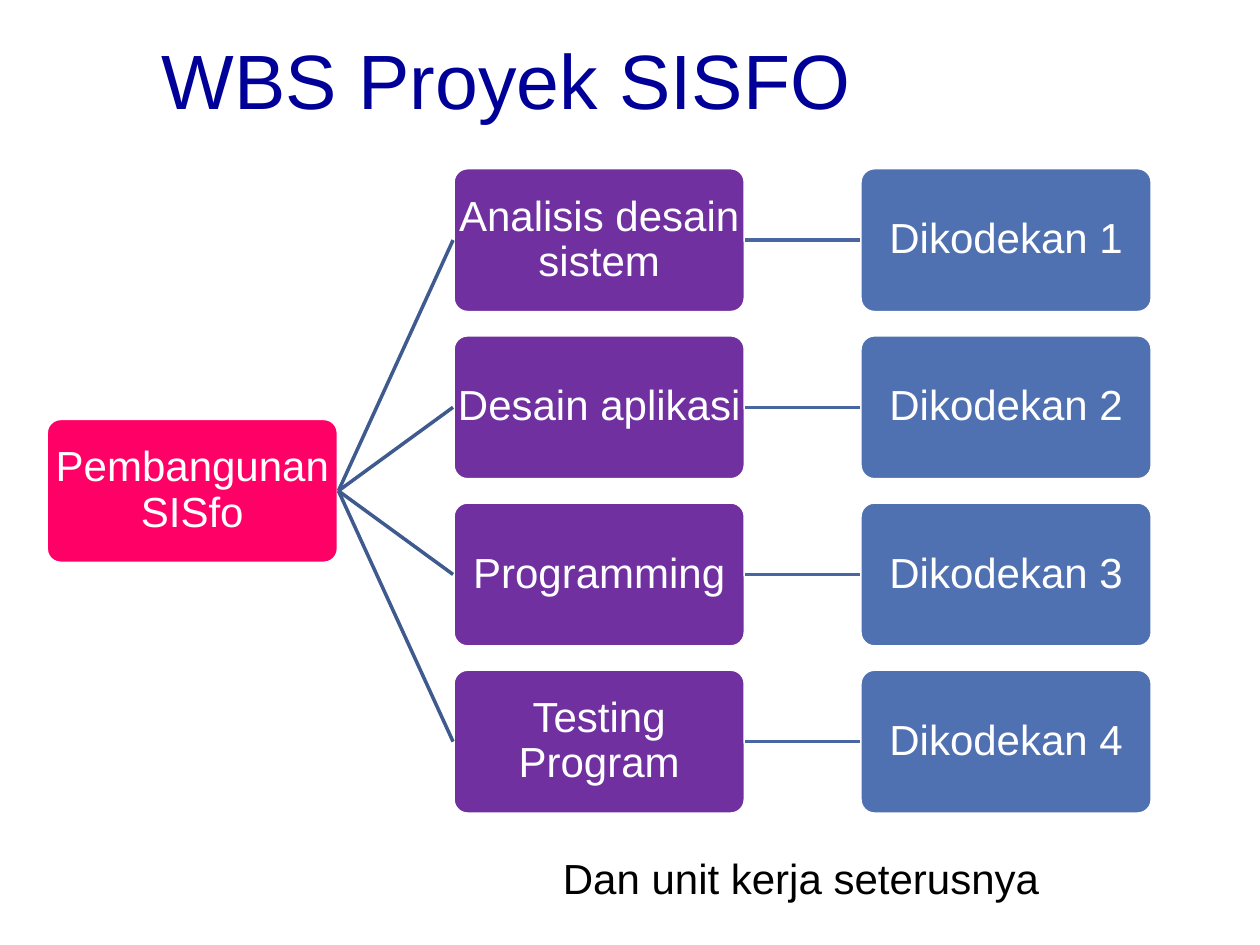
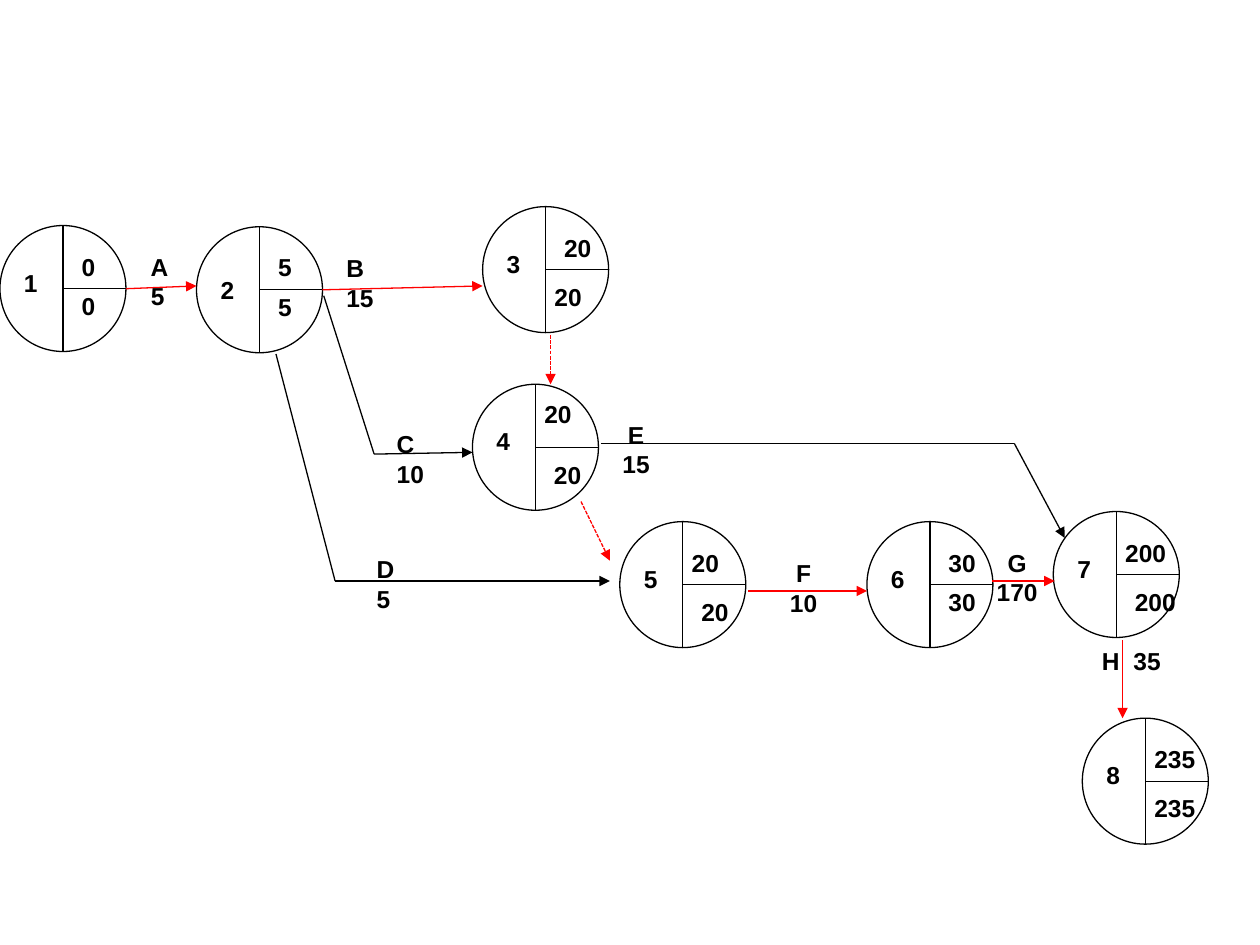
from itertools import pairwise

from lxml.etree import SubElement
from pptx import Presentation
from pptx.dml.color import RGBColor
from pptx.enum.dml import MSO_LINE
from pptx.enum.shapes import MSO_CONNECTOR, MSO_SHAPE
from pptx.enum.text import MSO_ANCHOR, PP_ALIGN
from pptx.oxml.ns import qn
from pptx.util import Pt

FONT = "Arial"
NAVY = RGBColor(0x00, 0x00, 0x99)
PINK = RGBColor(0xFF, 0x00, 0x66)
PURPLE = RGBColor(0x70, 0x30, 0xA0)
BLUE = RGBColor(0x4F, 0x70, 0xB1)
BRANCH_BLUE = RGBColor(0x3F, 0x5A, 0x8E)
LINK_BLUE = RGBColor(0x48, 0x66, 0xA1)
RED = RGBColor(0xFF, 0x00, 0x00)
BLACK = RGBColor(0x00, 0x00, 0x00)
WHITE = RGBColor(0xFF, 0xFF, 0xFF)

UNITS = ["Analisis desain sistem", "Desain aplikasi", "Programming", "Testing Program"]

NEAR, FAR = 34, 39.5
EVENTS = [
    ("1", (0, 128.9), 20.5, ("0", FAR, 11.5), ("0", FAR, NEAR)),
    ("2", (112.3, 129.6), 24, ("5", FAR, 11), ("5", FAR, NEAR)),
    ("3", (275.8, 118.1), 20.5, ("20", FAR, 11.5), ("20", NEAR, FAR)),
    ("4", (270, 219.6), 20.5, ("20", NEAR, 5), ("20", FAR, FAR)),
    ("5", (354.2, 298.1), 20.5, ("20", NEAR, 11.5), ("20", FAR, FAR)),
    ("6", (495.4, 298.1), 20.5, ("30", FAR, 11.5), ("30", FAR, NEAR)),
    ("7", (601.9, 292.3), 20.5, ("200", NEAR, 11.5), ("200", FAR, FAR)),
    ("8", (618.5, 410.4), 20.5, ("235", NEAR, 11.5), ("235", NEAR, FAR)),
]
ROUTES = [
    ([(72, 165), (112.3, 163.4)], RED, False),
    ([(184.3, 165.6), (275.8, 163.4)], RED, False),
    ([(185, 169), (213.8, 259.5), (270, 258.5)], BLACK, False),
    ([(157.7, 202.3), (191.5, 332), (348.5, 332)], BLACK, False),
    ([(343.4, 253.4), (579.6, 253.4), (608.4, 307.4)], BLACK, False),
    ([(314.6, 191.5), (314.6, 219.6)], RED, True),
    ([(332, 286.6), (348.5, 320.4)], RED, True),
    ([(427.7, 337.7), (495.4, 337.7)], RED, False),
    ([(566.6, 332), (602.6, 332)], RED, False),
    ([(641.5, 365.8), (641.5, 410.4)], RED, False),
]
ACTIVITIES = [
    ("A\n5", 79, 140.4, PP_ALIGN.CENTER),
    ("B\n15", 190.8, 141.1, PP_ALIGN.LEFT),
    ("C\n10", 219.6, 241.9, PP_ALIGN.LEFT),
    ("D\n5", 208.1, 313.2, PP_ALIGN.LEFT),
    ("E\n15", 348.5, 236.2, PP_ALIGN.CENTER),
    ("F\n10", 444.2, 315.4, PP_ALIGN.CENTER),
    ("G\n170", 562.3, 309.6, PP_ALIGN.CENTER),
]


def write(sp, text, size=14, color=BLACK, bold=False, align=PP_ALIGN.LEFT,
          anchor=MSO_ANCHOR.TOP, wrap=True, inset=None, spacing=None, tab=None):
    """Fill a shape with text, one paragraph per line."""
    tf = sp.text_frame
    tf.word_wrap = wrap
    tf.vertical_anchor = anchor
    if inset is not None:
        tf.margin_left = tf.margin_right = tf.margin_top = tf.margin_bottom = Pt(inset)
    tf.text = text
    for p in tf.paragraphs:
        p.alignment = align
        if spacing:
            p.line_spacing = spacing
        if tab:
            tabs = SubElement(p._p.get_or_add_pPr(), qn("a:tabLst"))
            SubElement(tabs, qn("a:tab"), pos=str(Pt(tab)), algn="l")
        for r in p.runs:
            r.font.name, r.font.size = FONT, Pt(size)
            r.font.bold, r.font.color.rgb = bold, color


def add_box(s, kind, left, top, width, height, fill, line, weight):
    """Add a filled and outlined preset shape."""
    sp = s.shapes.add_shape(kind, Pt(left), Pt(top), Pt(width), Pt(height))
    sp.shadow.inherit = False
    sp.fill.solid()
    sp.fill.fore_color.rgb = fill
    sp.line.color.rgb = line
    sp.line.width = Pt(weight)
    return sp


def add_line(s, start, end, color=BLACK, weight=0.75, dashed=False, arrow=False):
    """Add a straight connector between two points."""
    c = s.shapes.add_connector(MSO_CONNECTOR.STRAIGHT, *(Pt(v) for v in (*start, *end)))
    c.line.color.rgb = color
    c.line.width = Pt(weight)
    if dashed:
        c.line.dash_style = MSO_LINE.SQUARE_DOT
    if arrow:
        SubElement(c.line._get_or_add_ln(), qn("a:tailEnd"), type="triangle")
    SubElement(c._element.spPr, qn("a:effectLst"))
    return c


def add_label(s, text, left, top, align=PP_ALIGN.LEFT):
    """Add a bold label whose box is fitted to its text."""
    lines = text.split("\n")
    width = 14.4 + 7.8 * max(map(len, lines))
    sp = s.shapes.add_textbox(Pt(left), Pt(top), Pt(width), Pt(7.4 + 16.8 * len(lines)))
    write(sp, text, bold=True, align=align, wrap=False)
    return sp


def add_unit(s, text, left, top, width, height, fill):
    """Add one rounded box of the breakdown tree."""
    sp = add_box(s, MSO_SHAPE.ROUNDED_RECTANGLE, left, top, width, height, fill, WHITE, 2)
    sp.adjustments[0] = 0.1
    write(sp, text, size=24, color=WHITE, align=PP_ALIGN.CENTER,
          anchor=MSO_ANCHOR.MIDDLE, inset=0, spacing=0.9)
    return sp


def join(s, left_box, right_box, color):
    """Connect the right side of one box to the left side of another."""
    c = add_line(s, (0, 0), (0, 0), color, 2)
    c.begin_connect(left_box, 3)
    c.end_connect(right_box, 1)


def add_tree(s, left, top, width, height):
    """Lay out the root, its work units and their codes in three columns."""
    box_w, box_h = 167, 82.8
    col_step = (width - box_w) / 2
    row_step = (height - box_h) / (len(UNITS) - 1)
    root = add_unit(s, "Pembangunan SISfo", left, top + (height - box_h) / 2,
                    box_w, box_h, PINK)
    for i, name in enumerate(UNITS):
        y = top + i * row_step
        unit = add_unit(s, name, left + col_step, y, box_w, box_h, PURPLE)
        code = add_unit(s, f"Dikodekan {i + 1}", left + 2 * col_step, y, box_w, box_h, BLUE)
        join(s, root, unit, BRANCH_BLUE)
        join(s, unit, code, LINK_BLUE)


def add_event(s, left, top, number, number_top, early, late, size=72):
    """Add an event circle split into its number and two times."""
    mid_x, mid_y = left + size / 2, top + size / 2
    add_box(s, MSO_SHAPE.OVAL, left, top, size, size, WHITE, BLACK, 0.75)
    add_line(s, (mid_x, top), (mid_x, top + size))
    add_line(s, (mid_x, mid_y), (left + size, mid_y))
    add_label(s, number, left + 6.5, top + number_top, PP_ALIGN.CENTER)
    for time, dx, dy in (early, late):
        add_label(s, time, left + dx, top + dy)


def build_breakdown(prs):
    """Build the work breakdown slide."""
    s = prs.slides.add_slide(prs.slide_layouts[5])
    title = s.shapes.title
    title.left, title.top, title.width, title.height = Pt(0), Pt(0), Pt(579), Pt(90)
    write(title, "WBS Proyek SISFO", size=44, color=NAVY, align=PP_ALIGN.CENTER,
          anchor=MSO_ANCHOR.MIDDLE)
    add_tree(s, 26.4, 95.8, 632, 369.4)
    caption = s.shapes.add_textbox(Pt(314.6), Pt(483.8), Pt(376.6), Pt(36))
    write(caption, "Dan unit kerja seterusnya", size=24)


def build_network(prs):
    """Build the activity network slide."""
    s = prs.slides.add_slide(prs.slide_layouts[6])
    for number, corner, number_top, early, late in EVENTS:
        add_event(s, *corner, number, number_top, early, late)
    for points, color, dashed in ROUTES:
        for start, end in pairwise(points):
            add_line(s, start, end, color, dashed=dashed, arrow=end == points[-1])
    for activity in ACTIVITIES:
        add_label(s, *activity)
    last = s.shapes.add_textbox(Pt(622.6), Pt(365.8), Pt(64), Pt(24.2))
    write(last, "H\t35", bold=True, tab=18)


def main():
    """Build and save the presentation."""
    prs = Presentation()
    prs.slide_width, prs.slide_height = Pt(720), Pt(540)
    build_breakdown(prs)
    build_network(prs)
    prs.save("out.pptx")


if __name__ == "__main__":
    main()
